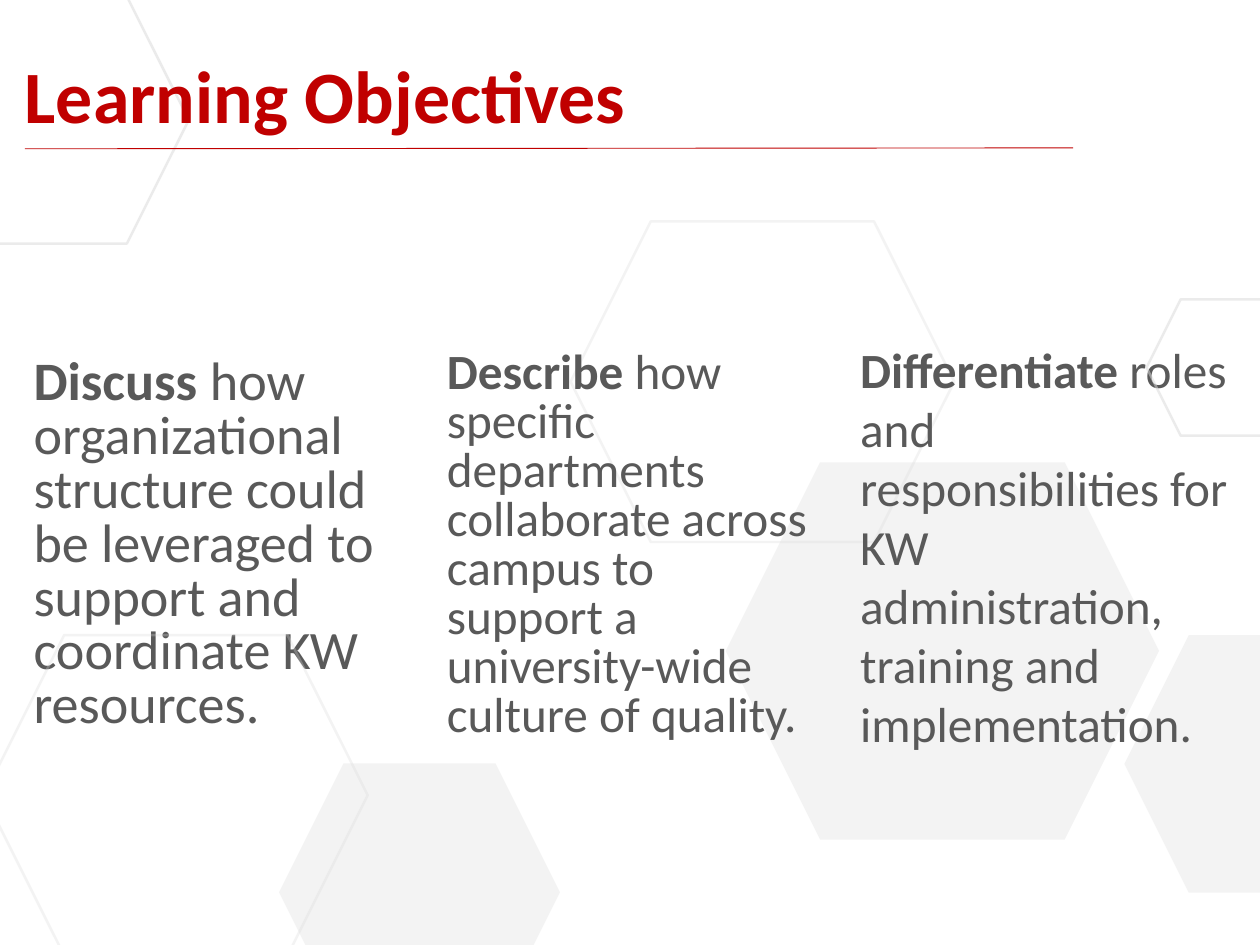
from dataclasses import dataclass

from lxml.etree import SubElement
from pptx import Presentation
from pptx.dml.color import RGBColor as Rgb
from pptx.enum.shapes import MSO_CONNECTOR as Link, MSO_SHAPE as Shape
from pptx.enum.text import MSO_ANCHOR as Anchor, MSO_AUTO_SIZE as Fit, PP_ALIGN as Align
from pptx.oxml.ns import qn
from pptx.util import Pt

SCALE = 9144  # EMU in one px, 100 px to the inch


@dataclass(frozen=True)
class Theme:
    font: str = "Calibri"
    red: Rgb = Rgb(0xC0, 0x00, 0x00)
    ink: Rgb = Rgb(0x59, 0x59, 0x59)
    grey: Rgb = Rgb(0xD9, 0xD9, 0xD9)
    head: int = 60
    large: int = 44
    body: int = 40
    edge: float = 2
    rule: float = 0.75


THEME = Theme()

# left, top, width, height, opacity in percent, filled
BACK = [
    (-106, -4, 319, 279, 50, False),
    (819, 522, 489, 426, 30, True),
    (1269, 717, 317, 291, 30, True),
    (644, 250, 433, 362, 30, False),
]
FRONT = [
    (-18, 717, 433, 362, 30, False),
    (315, 862, 317, 291, 30, True),
    (1294, 338, 183, 154, 50, False),
]

# verb, rest, type size, line spacing, space after
GOALS = [
    ("Discuss", " how organizational structure could be leveraged to support "
     "and coordinate KW resources.", THEME.large, 0.83, 35),
    ("Describe ", "how specific departments collaborate across campus to support "
     "a university-wide culture of quality.", THEME.body, 0.83, 35),
    ("Differentiate ", "roles and responsibilities for KW administration, "
     "training and implementation.", THEME.body, 1.0, 0),
]
LEFT, STEP = 28, 466.5


def px(*sizes):
    return [round(size * SCALE) for size in sizes]


def paint(fill, alpha):
    """Give a fill the theme grey at an opacity in percent."""
    fill.solid()
    fill.fore_color.rgb = THEME.grey
    color = fill._xPr.find(qn("a:solidFill"))[0]
    SubElement(color, qn("a:alpha"), val=str(alpha * 1000))


def add_hex(slide, left, top, width, height, alpha, filled):
    cell = slide.shapes.add_shape(Shape.HEXAGON, *px(left, top, width, height))
    cell.shadow.inherit = False
    if filled:
        paint(cell.fill, alpha)
        cell.line.fill.background()
    else:
        cell.fill.background()
        cell.line.width = Pt(THEME.edge)
        paint(cell.line.fill, alpha)


def add_run(para, text, size, color, bold):
    run = para.add_run()
    run.text = text
    font = run.font
    font.name, font.size, font.bold = THEME.font, Pt(size), bold
    font.color.rgb = color


def set_title(slide, text):
    """Fill the title and lift it above the shapes drawn so far."""
    title = slide.shapes.title
    title.left, title.top, title.width, title.height = px(0, 56, 1422, 107)
    frame = title.text_frame
    frame.word_wrap, frame.auto_size = True, Fit.NONE
    frame.vertical_anchor = Anchor.TOP
    frame.margin_left, frame.margin_right = px(28, 28)
    frame.margin_top = frame.margin_bottom = 0
    para = frame.paragraphs[0]
    para.alignment = Align.LEFT
    add_run(para, text, THEME.head, THEME.red, True)
    title.element.getparent().append(title.element)


def add_goal(slide, left, verb, rest, size, lead, after):
    box = slide.shapes.add_textbox(*px(left, 275, 435, 683))
    frame = box.text_frame
    frame.word_wrap = True
    frame.vertical_anchor = Anchor.MIDDLE
    para = frame.paragraphs[0]
    para.line_spacing, para.space_after = lead, Pt(after)
    add_run(para, verb, size, THEME.ink, True)
    add_run(para, rest, size, THEME.ink, False)


def add_rule(slide, *ends):
    rule = slide.shapes.add_connector(Link.STRAIGHT, *px(*ends))
    rule.line.color.rgb = THEME.red
    rule.line.width = Pt(THEME.rule)
    SubElement(rule.element.spPr, qn("a:effectLst"))


def main():
    deck = Presentation()
    deck.slide_width, deck.slide_height = px(1422, 1067)
    slide = deck.slides.add_slide(deck.slide_layouts[5])
    for cell in BACK:
        add_hex(slide, *cell)
    set_title(slide, "Learning Objectives")
    for col, goal in enumerate(GOALS):
        add_goal(slide, LEFT + col * STEP, *goal)
    add_rule(slide, LEFT, 168, 1211, 167)
    for cell in FRONT:
        add_hex(slide, *cell)
    deck.save("out.pptx")


if __name__ == "__main__":
    main()
